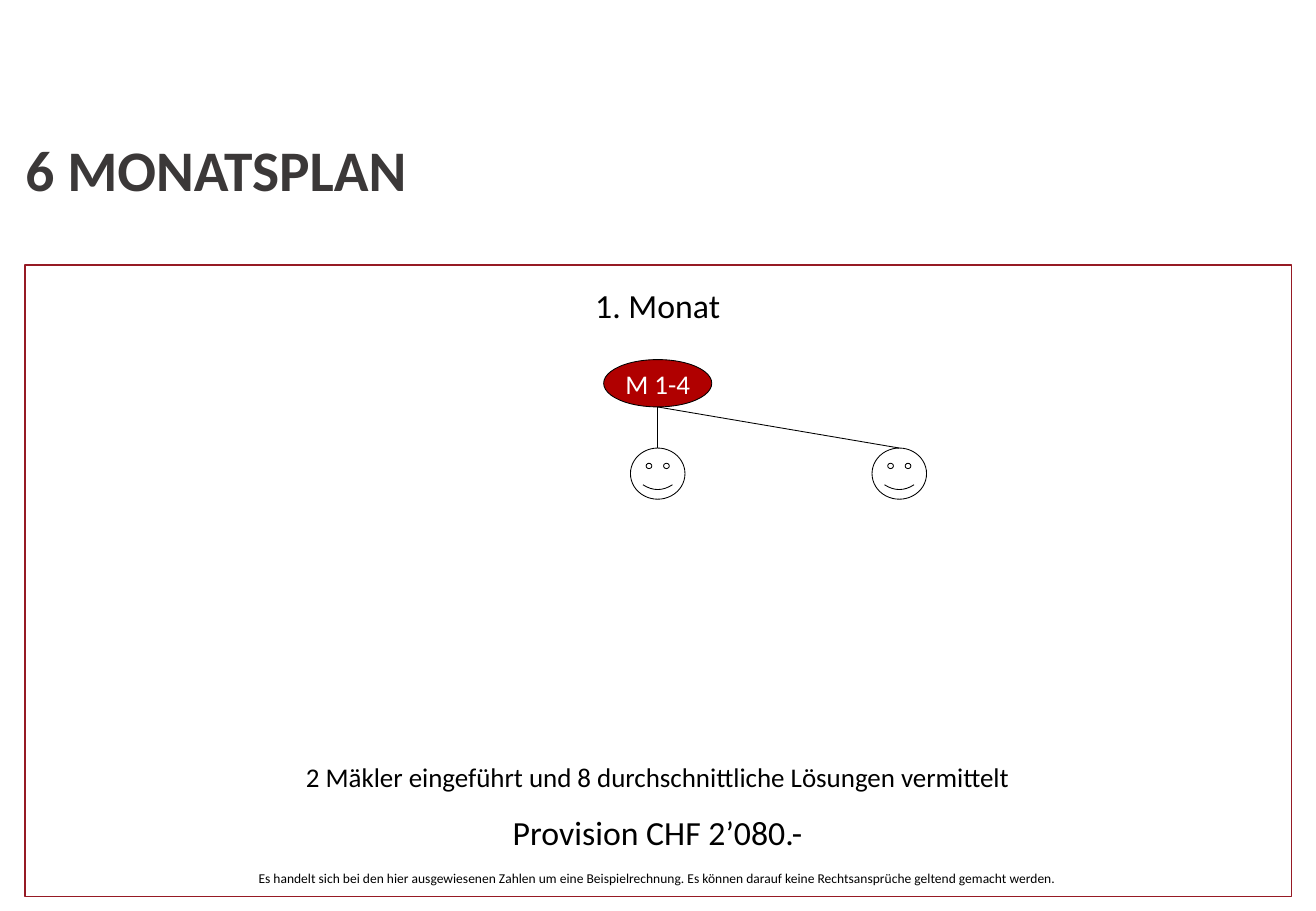
from pptx import Presentation
from pptx.dml.color import RGBColor
from pptx.enum.shapes import MSO_CONNECTOR, MSO_SHAPE
from pptx.enum.text import MSO_ANCHOR, PP_ALIGN
from pptx.oxml.ns import qn
from pptx.util import Cm, Pt
from lxml import etree

RECTANGLE, OVAL, SMILEY = MSO_SHAPE.RECTANGLE, MSO_SHAPE.OVAL, MSO_SHAPE.SMILEY_FACE
STRAIGHT = MSO_CONNECTOR.STRAIGHT
LEFT, CENTER = PP_ALIGN.LEFT, PP_ALIGN.CENTER
TOP, MIDDLE = MSO_ANCHOR.TOP, MSO_ANCHOR.MIDDLE

THEME = {
    "font": "Calibri",
    "colors": {"title": "3B3838", "text": "000000", "light": "FFFFFF",
               "frame": "961A24", "manager": "B00000"},
    "sizes": {"title": 34, "heading": 20, "body": 16, "note": 8},
    "lines": {"frame": 1, "thin": 0.5},
}

# Lengths in centimetres
SLIDE_SIZE = (27.51, 19.05)
MIDDLE_X = 13.75
FRAME = (0.53, 5.54, 26.47, 13.21)
TITLE = ("6 MONATSPLAN", (0.53, 2.03, 26.49, 3))
MANAGER_SIZE, MANAGER_TOP = (2.26, 0.99), 7.52
BROKER_SIZE, BROKER_TOP = (1.14, 1.07), 9.37
BROKER_CENTERS = [MIDDLE_X, MIDDLE_X + 5.05]

# text, top, width, height, size, color
CENTERED_TEXTS = [
    ("M 1-4", 7.57, 3.91, 0.94, "body", "light"),
    ("2 Mäkler eingeführt und 8 durchschnittliche Lösungen vermittelt",
     15.77, 26.47, 0.94, "body", "text"),
    ("Provision CHF 2’080.-", 16.84, 25.5, 1.12, "heading", "text"),
    ("1. Monat", 5.84, 3.91, 1.12, "heading", "text"),
    ("Es handelt sich bei den hier ausgewiesenen Zahlen um eine Beispielrechnung. "
     "Es können darauf keine Rechtsansprüche geltend gemacht werden.",
     18.06, 26.49, 0.61, "note", "text"),
]


def color(name):
    return RGBColor.from_string(THEME["colors"][name])


def centered(center, top, width, height):
    """Return the box whose horizontal middle is at center."""
    return center - width / 2, top, width, height


def add_outlined(slide, kind, box, line_color="text", line="thin", fill=None):
    shape = slide.shapes.add_shape(kind, *map(Cm, box))
    shape.shadow.inherit = False
    shape.line.color.rgb = color(line_color)
    shape.line.width = Pt(THEME["lines"][line])
    if fill:
        shape.fill.solid()
        shape.fill.fore_color.rgb = color(fill)
    else:
        shape.fill.background()


def add_line(slide, start, end):
    connector = slide.shapes.add_connector(STRAIGHT, *map(Cm, start + end))
    connector.line.color.rgb = color("text")
    connector.line.width = Pt(THEME["lines"]["thin"])
    etree.SubElement(connector._element.spPr, qn("a:effectLst"))


def add_text(slide, text, box, size, text_color, align=CENTER, anchor=TOP,
             bold=False, frame_format=None):
    text_frame = slide.shapes.add_textbox(*map(Cm, box)).text_frame
    settings = {"word_wrap": True, "vertical_anchor": anchor, **(frame_format or {})}
    for name, value in settings.items():
        setattr(text_frame, name, value)
    paragraph = text_frame.paragraphs[0]
    paragraph.text = text
    paragraph.alignment = align
    font = paragraph.runs[0].font
    font_format = {"name": THEME["font"], "size": Pt(THEME["sizes"][size]), "bold": bold}
    for name, value in font_format.items():
        setattr(font, name, value)
    font.color.rgb = color(text_color)


def main():
    presentation = Presentation()
    presentation.slide_width, presentation.slide_height = map(Cm, SLIDE_SIZE)
    slide = presentation.slides.add_slide(presentation.slide_layouts[6])

    add_outlined(slide, RECTANGLE, FRAME, "frame", "frame")
    add_outlined(slide, OVAL, centered(MIDDLE_X, MANAGER_TOP, *MANAGER_SIZE),
                 fill="manager")
    manager_bottom = (MIDDLE_X, MANAGER_TOP + MANAGER_SIZE[1])
    for center in BROKER_CENTERS:
        add_outlined(slide, SMILEY, centered(center, BROKER_TOP, *BROKER_SIZE))
        add_line(slide, manager_bottom, (center, BROKER_TOP))

    margins = ("margin_left", "margin_top", "margin_right", "margin_bottom")
    add_text(slide, *TITLE, "title", "title", LEFT, MIDDLE, True,
             dict.fromkeys(margins, 0))
    for text, top, width, height, size, text_color in CENTERED_TEXTS:
        add_text(slide, text, centered(MIDDLE_X, top, width, height), size, text_color)

    presentation.save("out.pptx")


if __name__ == "__main__":
    main()
